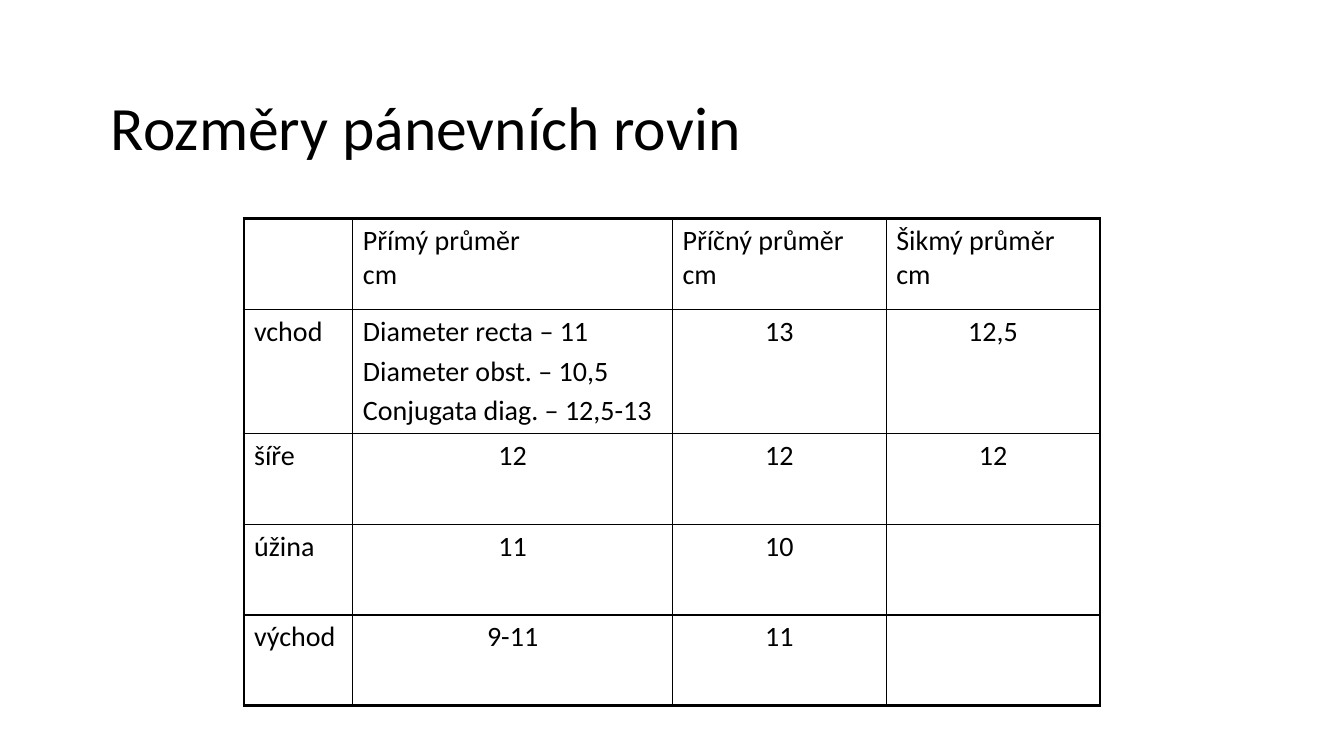
from lxml import etree
from pptx import Presentation
from pptx.dml.color import RGBColor
from pptx.enum.text import MSO_ANCHOR, PP_ALIGN
from pptx.oxml.ns import qn
from pptx.util import Inches, Pt

LEFT, CENTER = PP_ALIGN.LEFT, PP_ALIGN.CENTER
MIDDLE = MSO_ANCHOR.MIDDLE
TITLE_ONLY = 5

COLUMN_WIDTHS = [1.08, 3.17, 2.12, 2.12]
ROW_HEIGHTS = [0.9, 1.23, 0.9, 0.9, 0.9]
# "\v" is a line break, "\n" a new paragraph
DIAMETERS = [
    ["", "Přímý průměr\vcm", "Příčný průměr\vcm", "Šikmý průměr\vcm"],
    ["vchod", "Diameter recta – 11\nDiameter obst. – 10,5\nConjugata diag. – 12,5-13", "13", "12,5"],
    ["šíře", "12", "12", "12"],
    ["úžina", "11", "10", ""],
    ["východ", "9-11", "11", ""],
]


def color(code):
    return RGBColor.from_string(code)


class SlideBuilder:
    font_name = "Calibri"
    ink = "000000"
    thin, thick = 1, 2.25

    def __init__(self, page):
        self.page = page

    def style(self, para, size, align=LEFT):
        para.alignment = align
        para.font.name = self.font_name
        para.font.size = Pt(size)
        para.font.color.rgb = color(self.ink)

    def title(self, text, left, top, width, height):
        box = self.page.shapes.title
        box.left, box.top = Inches(left), Inches(top)
        box.width, box.height = Inches(width), Inches(height)
        frame = box.text_frame
        frame.text = text
        frame.word_wrap = True
        frame.vertical_anchor = MIDDLE
        para = frame.paragraphs[0]
        para.line_spacing = 0.9
        self.style(para, 44)

    def border(self, cell, side, weight):
        properties = cell._tc.get_or_add_tcPr()
        line = etree.SubElement(properties, qn("a:ln" + side), w=str(Pt(weight)))
        fill = etree.SubElement(line, qn("a:solidFill"))
        etree.SubElement(fill, qn("a:srgbClr"), val=self.ink)

    def cell(self, cell, text, align, outer_sides):
        for side in "LRTB":
            self.border(cell, side, self.thick if side in outer_sides else self.thin)
        cell.fill.background()
        cell.text_frame.text = text
        for index, para in enumerate(cell.text_frame.paragraphs):
            self.style(para, 20, align)
            para.space_before = Pt(4 if index else 0)

    def table(self, rows, left, top, widths, heights):
        frame = self.page.shapes.add_table(
            len(rows), len(widths), Inches(left), Inches(top),
            Inches(sum(widths)), Inches(sum(heights)))
        table = frame.table
        table.first_row = table.horz_banding = False
        for column, width in zip(table.columns, widths):
            column.width = Inches(width)
        for row, height in zip(table.rows, heights):
            row.height = Inches(height)
        last_row, last_column = len(rows) - 1, len(widths) - 1
        for r, texts in enumerate(rows):
            for c, text in enumerate(texts):
                # Labels and lists stand left, single values are centred
                align = LEFT if r == 0 or c == 0 or "\n" in text else CENTER
                edges = {"L": c == 0, "R": c == last_column,
                         "T": r == 0, "B": r == last_row}
                outer_sides = [side for side, outer in edges.items() if outer]
                self.cell(table.cell(r, c), text, align, outer_sides)


def main():
    deck = Presentation()
    deck.slide_width, deck.slide_height = Inches(13.33), Inches(7.5)
    builder = SlideBuilder(deck.slides.add_slide(deck.slide_layouts[TITLE_ONLY]))

    # Heading
    builder.title("Rozměry pánevních rovin", 1, 0.67, 11.33, 1.25)

    # Pelvic plane diameters
    builder.table(DIAMETERS, 2.42, 2.17, COLUMN_WIDTHS, ROW_HEIGHTS)

    deck.save("out.pptx")


if __name__ == "__main__":
    main()
